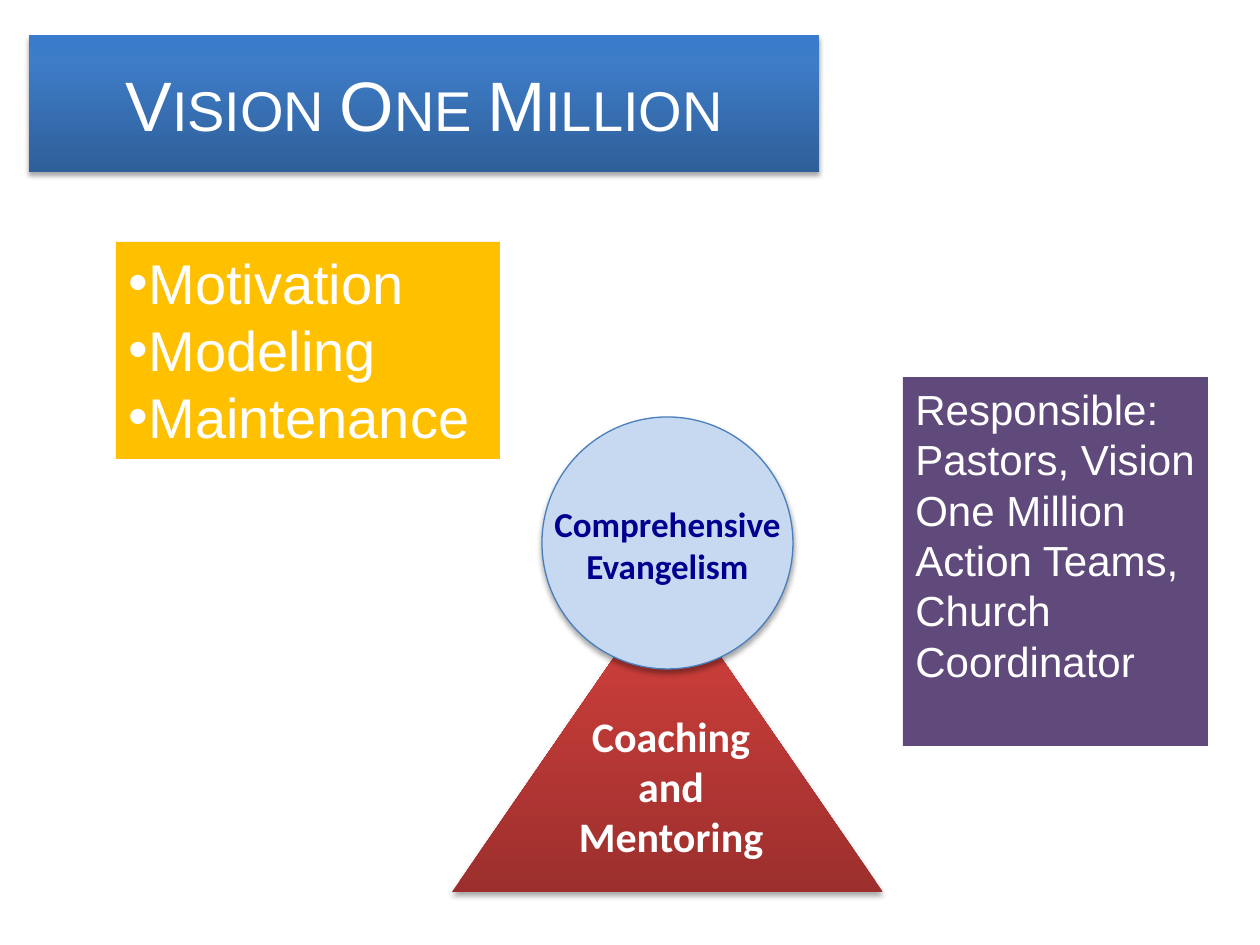
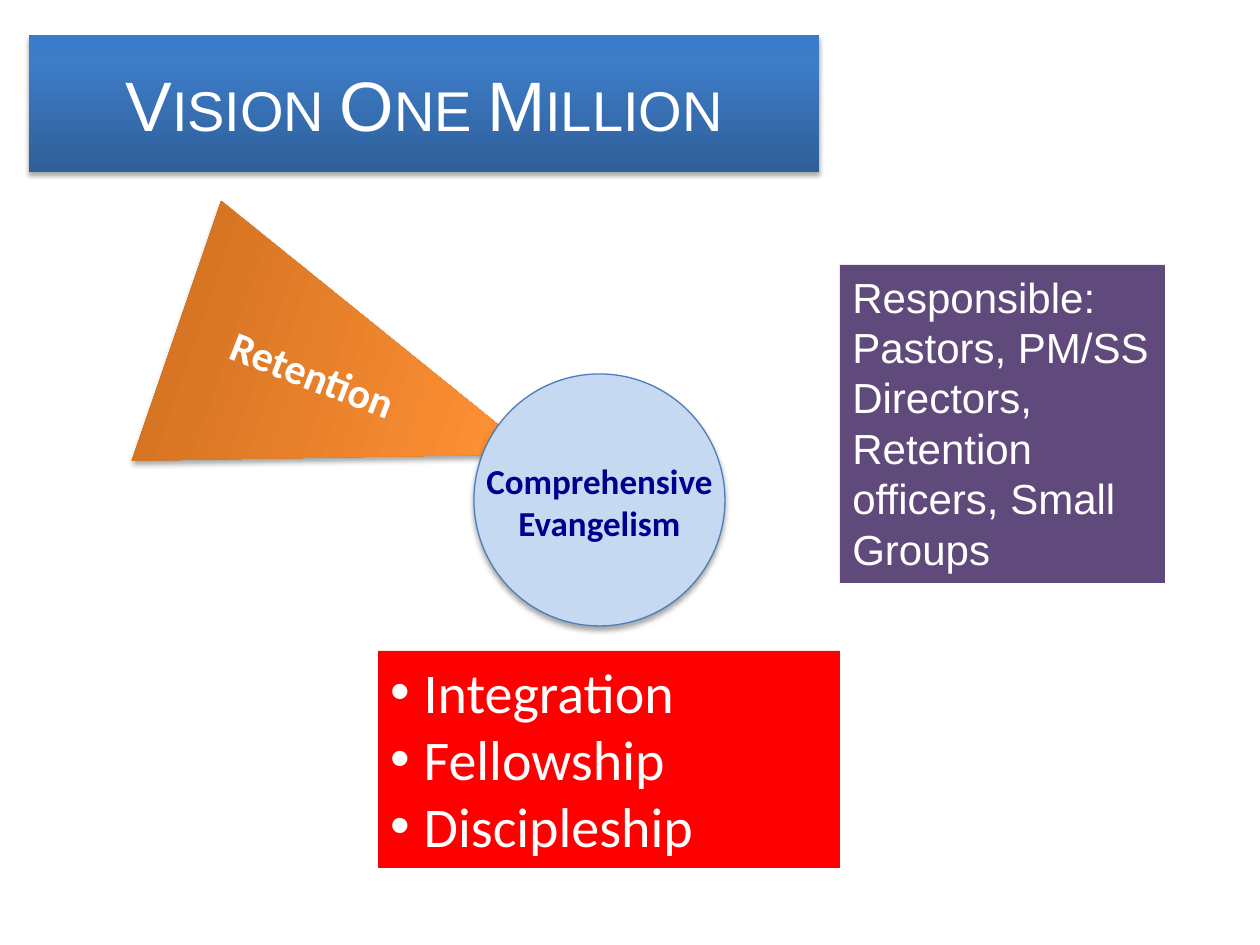
from lxml.etree import SubElement
from pptx import Presentation
from pptx.dml.color import RGBColor
from pptx.enum.shapes import MSO_SHAPE
from pptx.enum.text import MSO_ANCHOR, MSO_AUTO_SIZE, PP_ALIGN
from pptx.oxml.ns import qn
from pptx.util import Emu, Pt

PX = 914400 / 126
WHITE, NAVY, PURPLE = "FFFFFF", "000090", "604A7B"
HUB_FILL, HUB_LINE = "C6D9F1", "4B7EBC"
BLUES = ("2F5F99", "3D7CC7", "3A7CCB")
REDS = ("9C2F2D", "CB3E3A", "CE3B37")
ORANGES = ("CC6E20", "FF9034", "FF9136")

TITLE = "Vision One Million"
TITLE_AT = (29, 35, 790, 137)
HUB_TEXT = "Comprehensive Evangelism"
HUB_SIZE = (251, 252)
HUB_LABEL = (-27, 79, 305, 97)

PAGES = [
    {
        "bullets": ["Motivation", "Modeling", "Maintenance"],
        "list": {"at": (116, 242, 384, 217), "fill": "FFC000", "face": "Arial", "indent": 20},
        "wedge": {"at": (452, 580, 431, 312), "colours": REDS, "turn": 0},
        "label": {"text": "Coaching and Mentoring", "at": (547, 704, 248, 165),
                  "turn": 0, "align": PP_ALIGN.CENTER, "wrap": True},
        "owners": "Responsible: Pastors, Vision One Million Action Teams, Church Coordinator",
        "owners_at": (903, 377, 305, 369),
        "hub": (542, 417),
    },
    {
        "bullets": ["Integration", "Fellowship", "Discipleship"],
        "list": {"at": (378, 651, 462, 217), "fill": "FF0000", "face": "Calibri", "indent": 33},
        "wedge": {"at": (218, 203, 275, 379), "colours": ORANGES, "turn": 109},
        "label": {"text": "Retention", "at": (215, 343, 199, 63),
                  "turn": 21.2, "align": PP_ALIGN.LEFT, "wrap": False},
        "owners": "Responsible: Pastors, PM/SS Directors, Retention officers, Small Groups",
        "owners_at": (840, 265, 325, 318),
        "hub": (474, 374),
    },
]


def px(value):
    return Emu(round(value * PX))


def colour(value):
    return RGBColor.from_string(value)


def place(shape, at):
    shape.left, shape.top, shape.width, shape.height = map(px, at)


def fill(shape, value):
    shape.fill.solid()
    shape.fill.fore_color.rgb = colour(value)


def add_gradient(shape, colours):
    shape.fill.gradient()
    shape.fill.gradient_angle = 270
    stops = shape.element.spPr.find(qn("a:gradFill")).find(qn("a:gsLst"))
    for stop in list(stops):
        stops.remove(stop)
    for position, value in zip((0, 80, 100), colours):
        stop = SubElement(stops, qn("a:gs"), pos=str(position * 1000))
        SubElement(stop, qn("a:srgbClr"), val=value)
    line = stops.getparent().find(qn("a:lin"))
    line.set("ang", str(270 * 60000))
    line.set("scaled", "0")


def add_shadow(shape):
    shape.shadow.inherit = False
    effects = shape.element.spPr.find(qn("a:effectLst"))
    shadow = SubElement(effects, qn("a:outerShdw"), blurRad=str(Pt(3.1)), dist=str(Pt(1.8)),
                        dir=str(90 * 60000), rotWithShape="0")
    black = SubElement(shadow, qn("a:srgbClr"), val="000000")
    SubElement(black, qn("a:alpha"), val="35000")


def write(shape, *lines, size=24, face="Calibri", ink=WHITE, bold=False, align=PP_ALIGN.LEFT,
          anchor=MSO_ANCHOR.TOP, wrap=True, indent=0, small_caps=False):
    frame = shape.text_frame
    frame.auto_size = MSO_AUTO_SIZE.NONE
    frame.word_wrap = wrap
    frame.vertical_anchor = anchor
    for index, text in enumerate(lines):
        para = frame.add_paragraph() if index else frame.paragraphs[0]
        para.alignment = align
        para.space_before = Pt(0)
        if indent:
            properties = para._p.get_or_add_pPr()
            properties.set("marL", str(px(indent)))
            properties.set("indent", str(-px(indent)))
            SubElement(properties, qn("a:buFont"), typeface="Arial")
            SubElement(properties, qn("a:buChar"), char="•")
        span = para.add_run()
        span.text = text
        span.font.size = Pt(size)
        span.font.name = face
        span.font.bold = bold
        span.font.color.rgb = colour(ink)
        if small_caps:
            span.font._element.set("cap", "small")


def add_text(page, at, *lines, **style):
    box = page.shapes.add_textbox(*map(px, at))
    write(box, *lines, **style)
    return box


def add_title(page):
    title = page.shapes.title
    place(title, TITLE_AT)
    outline = SubElement(title.element.spPr, qn("a:prstGeom"), prst="snip2DiagRect")
    SubElement(outline, qn("a:avLst"))
    add_gradient(title, BLUES)
    add_shadow(title)
    write(title, TITLE, size=40, face="Arial", align=PP_ALIGN.CENTER,
          anchor=MSO_ANCHOR.MIDDLE, small_caps=True)


def add_list(page, bullets, at, fill_colour, face, indent):
    body = page.placeholders[1]
    place(body, at)
    fill(body, fill_colour)
    write(body, *bullets, size=32, face=face, indent=indent)


def add_wedge(page, wedge):
    triangle = page.shapes.add_shape(MSO_SHAPE.ISOSCELES_TRIANGLE, *map(px, wedge["at"]))
    triangle.rotation = wedge["turn"]
    add_gradient(triangle, wedge["colours"])
    triangle.line.fill.background()
    add_shadow(triangle)


def add_hub(page, left, top):
    circle = page.shapes.add_shape(MSO_SHAPE.OVAL, *map(px, (left, top, *HUB_SIZE)))
    fill(circle, HUB_FILL)
    circle.line.color.rgb = colour(HUB_LINE)
    circle.line.width = Pt(0.75)
    add_shadow(circle)
    across, down, width, height = HUB_LABEL
    add_text(page, (left + across, top + down, width, height), HUB_TEXT,
             size=20, ink=NAVY, bold=True, align=PP_ALIGN.CENTER)


def build_page(deck, content):
    page = deck.slides.add_slide(deck.slide_layouts[1])
    add_title(page)
    block, label = content["list"], content["label"]
    add_list(page, content["bullets"], block["at"], block["fill"], block["face"], block["indent"])
    add_wedge(page, content["wedge"])
    caption = add_text(page, label["at"], label["text"], bold=True,
                       align=label["align"], wrap=label["wrap"])
    caption.rotation = label["turn"]
    owners = add_text(page, content["owners_at"], content["owners"], face="Arial")
    fill(owners, PURPLE)
    add_hub(page, *content["hub"])


def main():
    deck = Presentation()
    deck.slide_width, deck.slide_height = px(1260), px(945)
    for content in PAGES:
        build_page(deck, content)
    deck.save("out.pptx")


if __name__ == "__main__":
    main()
